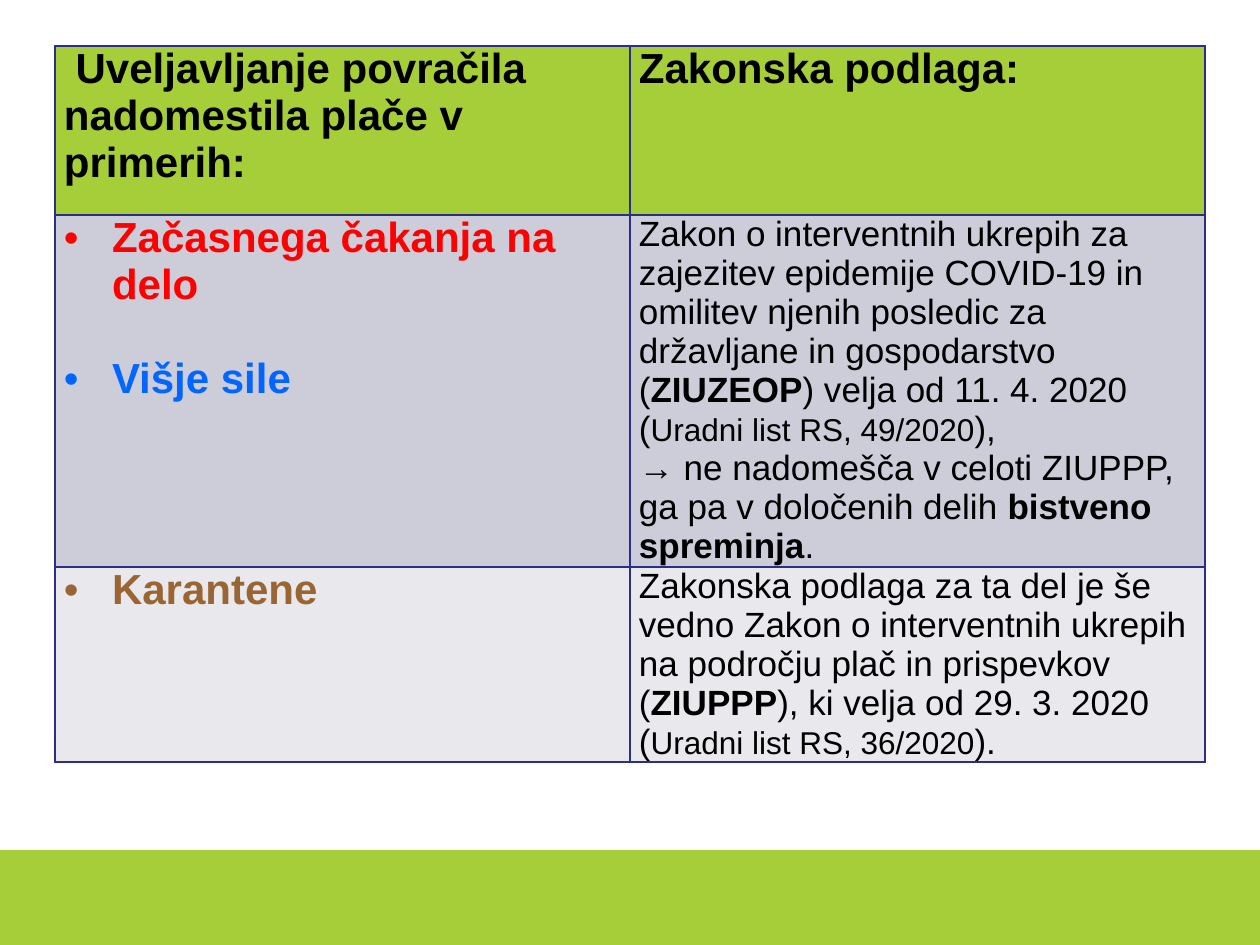
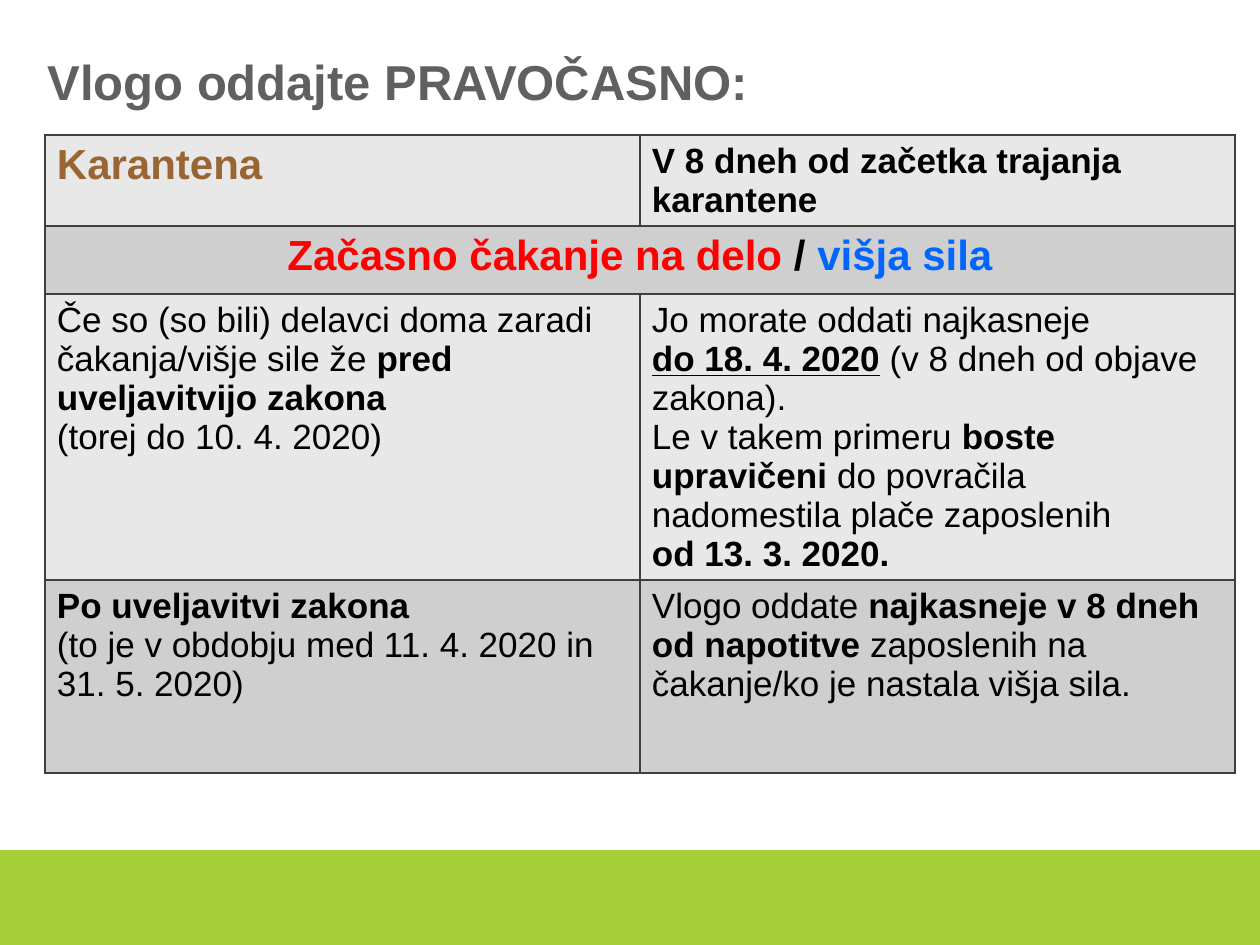
from lxml import etree
from pptx import Presentation
from pptx import util as u
from pptx.dml.color import RGBColor
from pptx.enum import shapes, text
from pptx.oxml.ns import qn

FONT = "Arial"
GREEN, GREY, BLACK = "A6CE39", "606060", "000000"
PLAIN = {"size": 20}
BOLD = {"size": 20, "bold": True}
UNDER = {"size": 20, "bold": True, "under": True}
SMALL = {"size": 18}
HEAD = {"size": 24, "bold": True}
RED = {**HEAD, "hue": "FF0000"}
BLUE = {**HEAD, "hue": "0066FF"}
BROWN = {**HEAD, "hue": "996633"}

BASIS = [
    [[[(" Uveljavljanje povračila nadomestila plače v primerih:", HEAD)]],
     [[("Zakonska podlaga:", HEAD)]]],
    [[[("Začasnega čakanja na delo", RED)], [("Višje sile", BLUE)]],
     [[("Zakon o interventnih ukrepih za zajezitev epidemije COVID-19 in omilitev "
        "njenih posledic za državljane in gospodarstvo (", PLAIN), ("ZIUZEOP", BOLD),
       (") velja od 11. 4. 2020 (", PLAIN), ("Uradni list RS, 49/2020", SMALL),
       ("),", PLAIN)],
      [("→ ne nadomešča v celoti ZIUPPP, ga pa v določenih delih ", PLAIN),
       ("bistveno spreminja", BOLD), (".", PLAIN)]]],
    [[[("Karantene", BROWN)]],
     [[("Zakonska podlaga za ta del je še vedno Zakon o interventnih ukrepih na "
        "področju plač in prispevkov (", PLAIN), ("ZIUPPP", BOLD),
       ("), ki velja od 29. 3. 2020 (", PLAIN), ("Uradni list RS, 36/2020", SMALL),
       (").", PLAIN)]]],
]

DATES = [
    [[[("Karantena", BROWN)]],
     [[("V 8 dneh od začetka trajanja karantene", BOLD)]]],
    [[[("Začasno čakanje na delo ", RED), ("/ ", HEAD), ("višja sila", BLUE)]], []],
    [[[("Če so (so bili) delavci doma zaradi čakanja/višje sile že ", PLAIN),
       ("pred uveljavitvijo zakona", BOLD)],
      [("(torej do 10. 4. 2020)", PLAIN)]],
     [[("Jo morate oddati najkasneje", PLAIN)],
      [("do 18. 4. 2020", UNDER), (" (v 8 dneh od objave zakona).", PLAIN)],
      [("Le v takem primeru ", PLAIN), ("boste upravičeni", BOLD),
       (" do povračila nadomestila plače zaposlenih", PLAIN)],
      [("od 13. 3. 2020.", BOLD)]]],
    [[[("Po uveljavitvi zakona", BOLD)],
      [("(to je v obdobju med 11. 4. 2020 in 31. 5. 2020)", PLAIN)]],
     [[("Vlogo oddate ", PLAIN), ("najkasneje v 8 dneh od napotitve", BOLD),
       (" zaposlenih na čakanje/ko je nastala višja sila.", PLAIN)]]],
]


def px(n):
    return u.Emu(round(n * 914400 / 126))


def rgb(hue):
    return RGBColor.from_string(hue)


def style(font, size, hue=BLACK, bold=False, under=False):
    font.name = FONT
    font.size = u.Pt(size)
    font.bold = bold
    font.underline = under
    font.color.rgb = rgb(hue)


def bullet(para):
    props = para._p.get_or_add_pPr()
    props.set("marL", str(px(48)))
    props.set("indent", str(-px(48)))
    etree.SubElement(props, qn("a:buFont")).set("typeface", FONT)
    etree.SubElement(props, qn("a:buChar")).set("char", "•")


def border(cell, hue):
    props = cell._tc.get_or_add_tcPr()
    for side in "LRTB":
        line = etree.SubElement(props, qn("a:ln" + side), w=str(u.Pt(1)))
        fill = etree.SubElement(line, qn("a:solidFill"))
        etree.SubElement(fill, qn("a:srgbClr"), val=hue)


def write(cell, paras):
    frame = cell.text_frame
    for i, runs in enumerate(paras):
        para = frame.paragraphs[0] if i == 0 else frame.add_paragraph()
        for words, look in runs:
            run = para.add_run()
            run.text = words
            style(run.font, **look)


def grid(slide, box, rows, data, fills, edge, pad):
    left, top, wide = box
    side, above, below = map(px, pad)
    table = slide.shapes.add_table(len(rows), 2, px(left), px(top),
                                   px(wide), px(sum(rows))).table
    table.first_row = table.horz_banding = False
    for r, high in enumerate(rows):
        table.rows[r].height = px(high)
        for c in range(2):
            cell = table.cell(r, c)
            cell.margin_left = cell.margin_right = side
            cell.margin_top, cell.margin_bottom = above, below
            border(cell, edge)
            cell.fill.solid()
            cell.fill.fore_color.rgb = rgb(fills[r])
            write(cell, data[r][c])
    return table


def band(slide):
    bar = slide.shapes.add_shape(shapes.MSO_SHAPE.RECTANGLE,
                                 0, px(850), px(1260), px(95))
    bar.shadow.inherit = False
    bar.fill.solid()
    bar.fill.fore_color.rgb = rgb(GREEN)
    bar.line.fill.background()


def title(slide, words, box):
    head = slide.shapes.title
    head.left, head.top, head.width, head.height = map(px, box)
    frame = head.text_frame
    frame.text = words
    frame.vertical_anchor = text.MSO_ANCHOR.MIDDLE
    para = frame.paragraphs[0]
    para.alignment = text.PP_ALIGN.LEFT
    style(para.runs[0].font, 28, GREY, True)


def basis(slide):
    band(slide)
    table = grid(slide, (55, 46, 1150), (169, 352, 195), BASIS,
                 (GREEN, "CDCDDA", "E8E8ED"), "2D2D8A", (9, 0, 0))
    for r in (1, 2):
        for i, para in enumerate(table.cell(r, 0).text_frame.paragraphs):
            if i:
                para.space_before = u.Pt(27)
            bullet(para)


def dates(slide):
    band(slide)
    title(slide, "Vlogo oddajte PRAVOČASNO:", (35, 36, 1191, 90))
    light, dark = "E8E8E8", "CFCFCF"
    table = grid(slide, (45, 135, 1190), (91, 68, 286, 193), DATES,
                 (light, dark) * 2, "3F3F3F", (12, 7, 5))
    wide = table.cell(1, 0)
    wide.merge(table.cell(1, 1))
    wide.text_frame.paragraphs[0].alignment = text.PP_ALIGN.CENTER


def main():
    prs = Presentation()
    prs.slide_width, prs.slide_height = px(1260), px(945)
    for layout, build in ((6, basis), (5, dates)):
        build(prs.slides.add_slide(prs.slide_layouts[layout]))
    prs.save("out.pptx")


if __name__ == "__main__":
    main()
